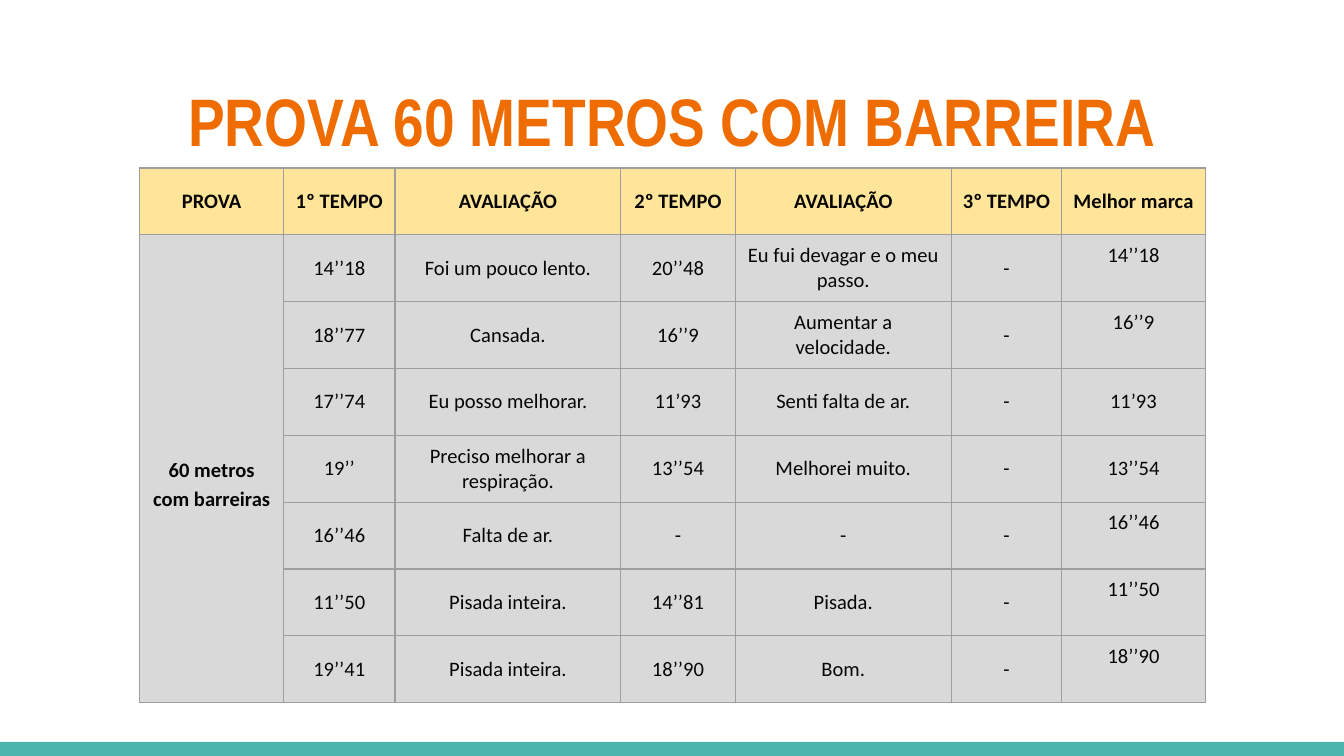
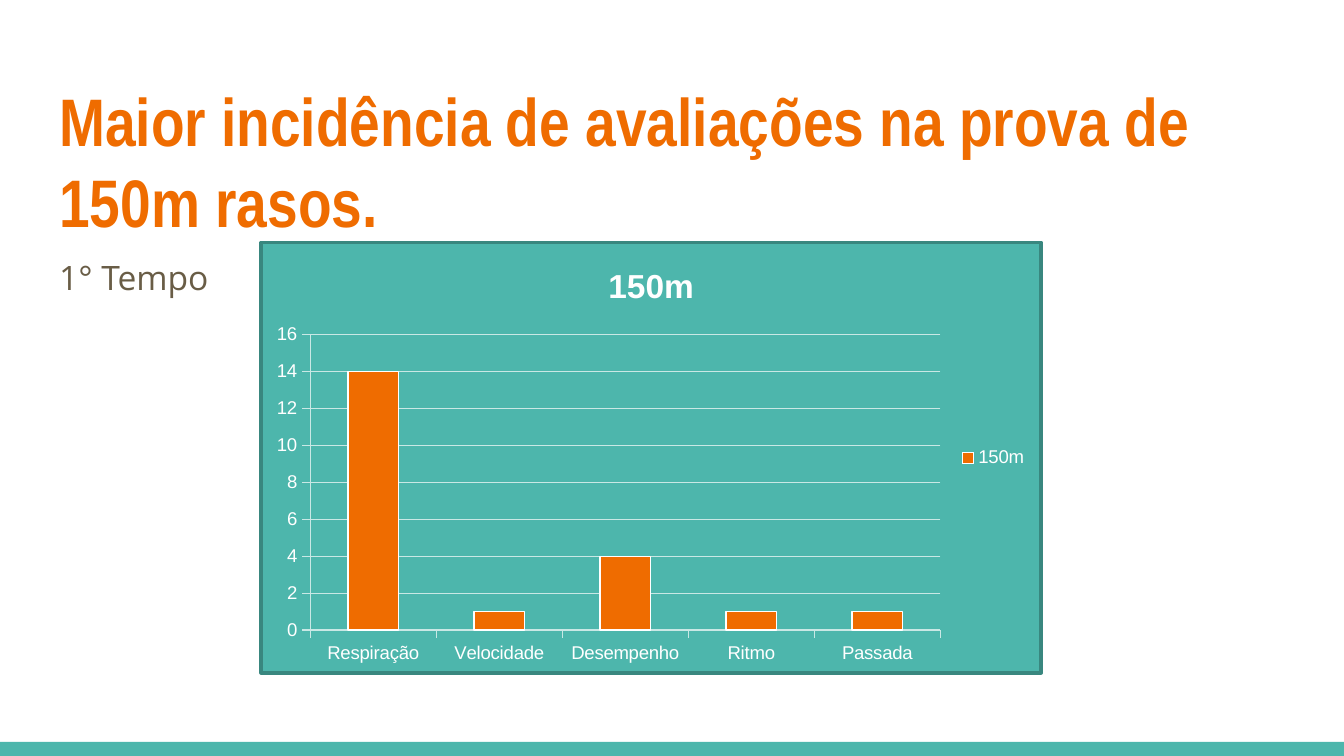
from lxml import etree
from pptx import Presentation
from pptx.chart.data import CategoryChartData as Data
from pptx.dml.color import RGBColor as RGB
from pptx.enum.chart import XL_CHART_TYPE as Kind, XL_LEGEND_POSITION as Side
from pptx.enum.chart import XL_TICK_MARK as Tick
from pptx.enum.shapes import MSO_SHAPE as Form
from pptx.enum.text import MSO_ANCHOR as Anchor, MSO_AUTO_SIZE as Fit, PP_ALIGN as Align
from pptx.oxml import parse_xml
from pptx.oxml.ns import nsdecls, qn
from pptx.util import Inches, Pt

TEAL = RGB(0x4D, 0xB6, 0xAC)
DEEP = RGB(0x39, 0x87, 0x7F)
PALE = RGB(0xC9, 0xE8, 0xE5)
ORANGE = RGB(0xEF, 0x6C, 0x00)
BROWN = RGB(0x69, 0x5D, 0x46)
INK = RGB(0x07, 0x06, 0x05)
CREAM = RGB(0xFF, 0xE5, 0x99)
GREY = RGB(0xD9, 0xD9, 0xD9)
RULE = RGB(0x9E, 0x9E, 0x9E)
WHITE = RGB(0xFF, 0xFF, 0xFF)

WIDTHS = [1.07, 0.83, 1.68, 0.85, 1.61, 0.82, 1.07]
HEIGHT = 3.98
HEAD = ["PROVA", "1º TEMPO", "AVALIAÇÃO", "2º TEMPO", "AVALIAÇÃO",
        "3º TEMPO", "Melhor marca"]
EVENT = "60 metros com barreiras"
MARKS = [
    ["14’’18", "Foi um pouco lento.", "20’’48", "Eu fui devagar e o meu passo.", "-", "14’’18"],
    ["18’’77", "Cansada.", "16’’9", "Aumentar a velocidade.", "-", "16’’9"],
    ["17’’74", "Eu posso melhorar.", "11’93", "Senti falta de ar.", "-", "11’93"],
    ["19’’", "Preciso melhorar a respiração.", "13’’54", "Melhorei muito.", "-", "13’’54"],
    ["16’’46", "Falta de ar.", "-", "-", "-", "16’’46"],
    ["11’’50", "Pisada inteira.", "14’’81", "Pisada.", "-", "11’’50"],
    ["19’’41", "Pisada inteira.", "18’’90", "Bom.", "-", "18’’90"],
]
RAISED = {1, 2, 5, 6, 7}  # rows whose best mark sits above the middle
COUNTS = {"Respiração": 14, "Velocidade": 1, "Desempenho": 4, "Ritmo": 1, "Passada": 1}


def style(font, name, size, color, bold=False):
    font.name, font.size, font.bold = name, Pt(size), bold
    font.color.rgb = color


def place(shape, left, top, width, height):
    shape.left, shape.top = Inches(left), Inches(top)
    shape.width, shape.height = Inches(width), Inches(height)


def fill_text(shape, text, align, *look):
    """Write one paragraph in a placeholder and return it."""
    frame = shape.text_frame
    frame.text = text
    frame.word_wrap, frame.auto_size = True, Fit.NONE
    frame.vertical_anchor = Anchor.TOP
    frame.margin_left = frame.margin_right = Inches(0.1)
    frame.margin_top = frame.margin_bottom = Inches(0.1)
    para = frame.paragraphs[0]
    para.alignment = align
    para.space_before = Pt(0)
    style(para.runs[0].font, *look)
    return para


def add_slide(deck, layout, title, align):
    slide = deck.slides.add_slide(deck.slide_layouts[layout])
    place(slide.shapes.title, 0.34, 0.49, 9.32, 0.77)
    fill_text(slide.shapes.title, title, align, "Arial Narrow", 36, ORANGE, True)
    return slide


def add_band(deck, slide):
    """Draw the bottom band and move it to the master, so every slide has it."""
    band = slide.shapes.add_shape(
        Form.RECTANGLE, 0, Inches(5.52), deck.slide_width, Inches(0.11))
    band.shadow.inherit = False
    band.fill.solid()
    band.fill.fore_color.rgb = TEAL
    band.line.fill.background()
    band.element.nvSpPr.cNvPr.set("id", "20")
    deck.slide_master.shapes.element.append(band.element)


def add_rules(cell):
    """Give a cell thin lines on its four sides."""
    for side in ("lnL", "lnR", "lnT", "lnB"):
        cell._tc.get_or_add_tcPr().append(parse_xml(
            f'<a:{side} {nsdecls("a")} w="{Pt(0.75)}"><a:solidFill>'
            f'<a:srgbClr val="{RULE}"/></a:solidFill></a:{side}>'))


def set_cell(cell, text, fill, bold):
    add_rules(cell)
    cell.fill.solid()
    cell.fill.fore_color.rgb = fill
    cell.vertical_anchor = Anchor.MIDDLE
    cell.margin_left = cell.margin_right = Inches(0.08)
    cell.margin_top = cell.margin_bottom = 0
    cell.text = text
    para = cell.text_frame.paragraphs[0]
    para.alignment = Align.CENTER
    for run in para.runs:
        style(run.font, "Calibri", 11, INK, bold)


def add_marks(slide):
    rows = [HEAD] + [[""] + marks for marks in MARKS]
    rows[1][0] = EVENT
    table = slide.shapes.add_table(
        len(rows), len(HEAD), Inches(1.04), Inches(1.25),
        Inches(sum(WIDTHS)), Inches(HEIGHT)).table
    for col, width in zip(table.columns, WIDTHS):
        col.width = Inches(width)
    for r, row in enumerate(rows):
        table.rows[r].height = Inches(HEIGHT / len(rows))
        for c, text in enumerate(row):
            set_cell(table.cell(r, c), text, GREY if r else CREAM, r == 0 or c == 0)
    for r in RAISED:
        table.cell(r, len(HEAD) - 1).margin_bottom = Inches(0.19)
    event = table.cell(1, 0)
    event.merge(table.cell(len(MARKS), 0))
    event.margin_top = Inches(0.21)
    event.text_frame.paragraphs[0].line_spacing = 1.15


def add_note(slide, text):
    body = slide.placeholders[1]
    place(body, 0.34, 1.77, 2.63, 2.83)
    para = fill_text(body, text, Align.LEFT, "Open Sans", 18, BROWN)
    para.line_spacing, para.space_after = 1.15, Pt(16)
    props = para._p.get_or_add_pPr()
    props.set("marL", "0")
    props.set("indent", "0")
    etree.SubElement(props, qn("a:buNone"))


def fill_chart(chart):
    """Give the chart area its fill and border."""
    chart.element.find(qn("c:chart")).addnext(parse_xml(
        f'<c:spPr {nsdecls("c", "a")}><a:solidFill><a:srgbClr val="{TEAL}"/></a:solidFill>'
        f'<a:ln w="{Pt(2)}"><a:solidFill><a:srgbClr val="{DEEP}"/></a:solidFill></a:ln>'
        '</c:spPr>'))


def set_line(line, color):
    line.color.rgb = color
    line.width = Pt(0.75)


def add_chart(slide, name, counts):
    data = Data()
    data.categories = list(counts)
    data.add_series(name, list(counts.values()))
    chart = slide.shapes.add_chart(
        Kind.COLUMN_CLUSTERED, Inches(1.93), Inches(1.79),
        Inches(5.83), Inches(3.23), data).chart
    fill_chart(chart)
    style(chart.font, "Arial", 10, WHITE)

    chart.has_title = True
    frame = chart.chart_title.text_frame
    frame.text = name
    style(frame.paragraphs[0].runs[0].font, "Arial", 18, WHITE, True)
    chart.chart_title.include_in_layout = False

    chart.has_legend = True
    chart.legend.position = Side.RIGHT
    chart.legend.include_in_layout = False

    for axis in (chart.category_axis, chart.value_axis):
        axis.major_tick_mark, axis.minor_tick_mark = Tick.OUTSIDE, Tick.NONE
        set_line(axis.format.line, PALE)
    scale = chart.value_axis
    scale.minimum_scale, scale.maximum_scale, scale.major_unit = 0, 16, 2
    scale.has_major_gridlines = True
    set_line(scale.major_gridlines.format.line, PALE)

    plot = chart.plots[0]
    plot.gap_width, plot.vary_by_categories = 150, False
    bars = plot.series[0].format
    bars.fill.solid()
    bars.fill.fore_color.rgb = ORANGE
    set_line(bars.line, WHITE)


def main():
    deck = Presentation()
    deck.slide_width = Inches(10)
    deck.slide_height = deck.slide_width * 9 // 16

    race = add_slide(deck, 5, "PROVA 60 METROS COM BARREIRA", Align.CENTER)
    add_band(deck, race)
    add_marks(race)

    review = add_slide(
        deck, 1, "Maior incidência de avaliações na prova de 150m rasos.", Align.LEFT)
    add_note(review, "1° Tempo")
    add_chart(review, "150m", COUNTS)

    deck.save("out.pptx")


if __name__ == "__main__":
    main()
